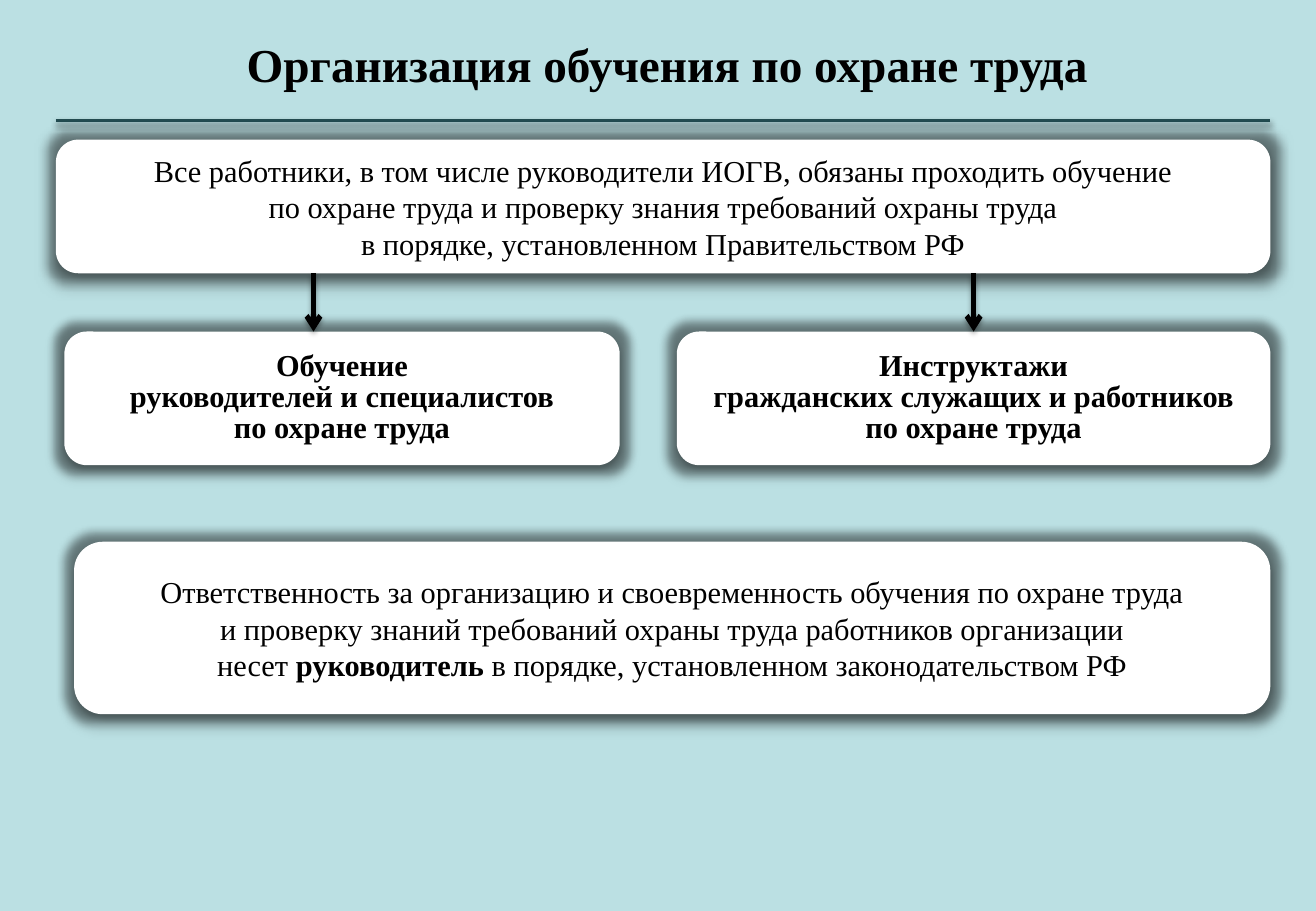
from lxml.etree import SubElement
from pptx import Presentation
from pptx.dml.color import RGBColor
from pptx.enum.shapes import MSO_CONNECTOR, MSO_SHAPE
from pptx.enum.text import MSO_ANCHOR, PP_ALIGN
from pptx.oxml.ns import qn
from pptx.util import Inches, Pt

BACKGROUND = RGBColor(0xBB, 0xE0, 0xE3)
RULE = RGBColor(0x22, 0x4B, 0x50)
BLACK = RGBColor(0x00, 0x00, 0x00)
WHITE = RGBColor(0xFF, 0xFF, 0xFF)

CELL = 0.1
LEFT, RIGHT = 4.6, 104.55
DUTY_TOP, DUTY_BOTTOM = 11.5, 22.5
BRANCH_TOP, BRANCH_HEIGHT = 27.3, 11

TITLE = {"name": "Times New Roman", "size": Pt(28), "bold": True}
BODY = {"name": "Times New Roman", "size": Pt(18), "bold": False}
STRONG = {**BODY, "bold": True}

CARD_SHADOW = {"blur": 3.5, "dist": 2.2, "opacity": 32}
LINE_SHADOW = {"blur": 3.1, "dist": 1.8, "opacity": 35}
GLOW_RADIUS, GLOW_OPACITY = 11, 40

DUTY = [
    [("Все работники, в том числе руководители ИОГВ, обязаны проходить обучение", BODY)],
    [("по охране труда и проверку знания требований охраны труда", BODY)],
    [("в порядке, установленном Правительством РФ", BODY)],
]
TRAINING = [
    [("Обучение", STRONG)],
    [("руководителей и специалистов", STRONG)],
    [("по охране труда", STRONG)],
]
BRIEFINGS = [
    [("Инструктажи", STRONG)],
    [("гражданских служащих и работников", STRONG)],
    [("по охране труда", STRONG)],
]
RESPONSIBILITY = [
    [("Ответственность за организацию и своевременность обучения по охране труда", BODY)],
    [("и проверку знаний требований охраны труда работников организации", BODY)],
    [("несет ", BODY), ("руководитель", STRONG),
     (" в порядке, установленном законодательством РФ", BODY)],
]


def grid(*cells):
    """Turn counts of grid cells into lengths."""
    return [Inches(CELL * count) for count in cells]


def add_effect(effects, kind, opacity, **attributes):
    """Append a black effect of the given opacity to an effect list."""
    effect = SubElement(effects, qn(f"a:{kind}"),
                        {key: str(value) for key, value in attributes.items()})
    colour = SubElement(effect, qn("a:srgbClr"), val=str(BLACK))
    SubElement(colour, qn("a:alpha"), val=str(opacity * 1000))


def add_shadow(effects, blur, dist, opacity):
    """Append a shadow that falls straight down."""
    add_effect(effects, "outerShdw", opacity, blurRad=Pt(blur), dist=Pt(dist),
               dir=90 * 60000, algn="ctr", rotWithShape=0)


def write_lines(frame, lines, spacing=None):
    """Write centred paragraphs, each made of formatted runs."""
    frame.word_wrap = True
    frame.vertical_anchor = MSO_ANCHOR.MIDDLE
    for index, pieces in enumerate(lines):
        paragraph = frame.add_paragraph() if index else frame.paragraphs[0]
        paragraph.alignment = PP_ALIGN.CENTER
        paragraph.line_spacing = spacing
        for text, formats in pieces:
            run = paragraph.add_run()
            run.text = text
            run.font.color.rgb = BLACK
            for attribute, value in formats.items():
                setattr(run.font, attribute, value)


def add_title(slide, text):
    """Add the heading above the rule."""
    heading = slide.shapes.add_textbox(*grid(6.1, 2.1, 97.6, 6.3))
    write_lines(heading.text_frame, [[(text, TITLE)]])


def add_card(slide, left, top, width, height, lines, spacing=None):
    """Add a white rounded card with a dark halo."""
    card = slide.shapes.add_shape(
        MSO_SHAPE.ROUNDED_RECTANGLE, *grid(left, top, width, height))
    card.fill.solid()
    card.fill.fore_color.rgb = WHITE
    card.line.fill.background()
    card.shadow.inherit = False
    effects = card._element.spPr.find(qn("a:effectLst"))
    add_effect(effects, "glow", GLOW_OPACITY, rad=Pt(GLOW_RADIUS))
    add_shadow(effects, **CARD_SHADOW)
    write_lines(card.text_frame, lines, spacing)
    return card


def add_line(slide, start, end, colour, weight):
    """Add a straight line with a soft shadow."""
    line = slide.shapes.add_connector(MSO_CONNECTOR.STRAIGHT, *grid(*start, *end))
    line.line.color.rgb = colour
    line.line.width = Pt(weight)
    add_shadow(SubElement(line._element.spPr, qn("a:effectLst")), **LINE_SHADOW)
    return line


def add_arrow(slide, column):
    """Add an arrow from the duty card down to a branch card."""
    arrow = add_line(slide, (column, DUTY_BOTTOM), (column, BRANCH_TOP), BLACK, 3)
    SubElement(arrow.line._get_or_add_ln(), qn("a:tailEnd"), type="arrow")
    return arrow


def main():
    """Build the slide and save it."""
    deck = Presentation()
    deck.slide_width, deck.slide_height = Inches(10.83), Inches(7.5)
    slide = deck.slides.add_slide(deck.slide_layouts[6])
    slide.background.fill.solid()
    slide.background.fill.fore_color.rgb = BACKGROUND

    add_title(slide, "Организация обучения по охране труда")
    add_line(slide, (LEFT, 9.9), (RIGHT, 9.9), RULE, 2)
    add_card(slide, LEFT, DUTY_TOP, RIGHT - LEFT, DUTY_BOTTOM - DUTY_TOP, DUTY)
    add_card(slide, 5.3, BRANCH_TOP, 45.7, BRANCH_HEIGHT, TRAINING, 0.85)
    add_arrow(slide, 25.8)
    briefings_left = 55.7
    briefings = add_card(slide, briefings_left, BRANCH_TOP, RIGHT - briefings_left,
                         BRANCH_HEIGHT, BRIEFINGS, 0.85)
    add_arrow(slide, (briefings_left + RIGHT) / 2).end_connect(briefings, 0)
    add_card(slide, 6.1, 44.6, RIGHT - 6.1, 14.2, RESPONSIBILITY)

    deck.save("out.pptx")


if __name__ == "__main__":
    main()
